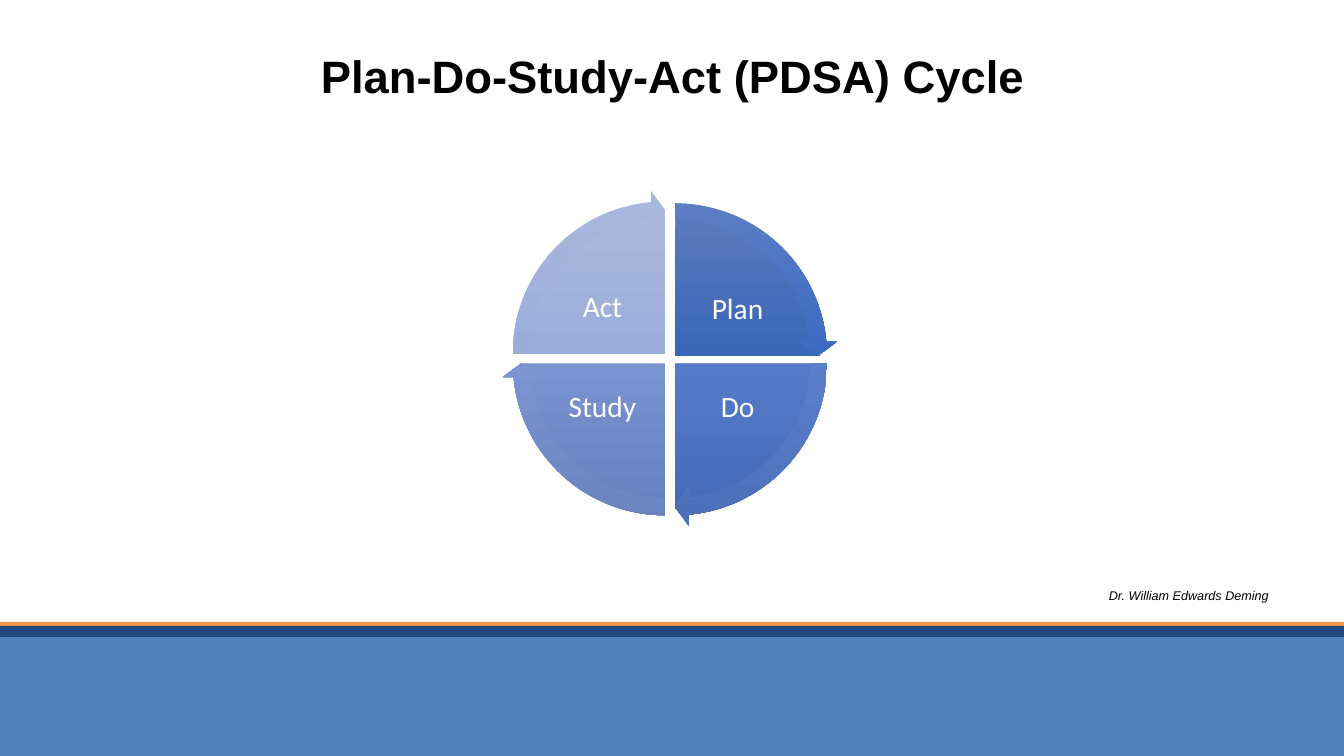
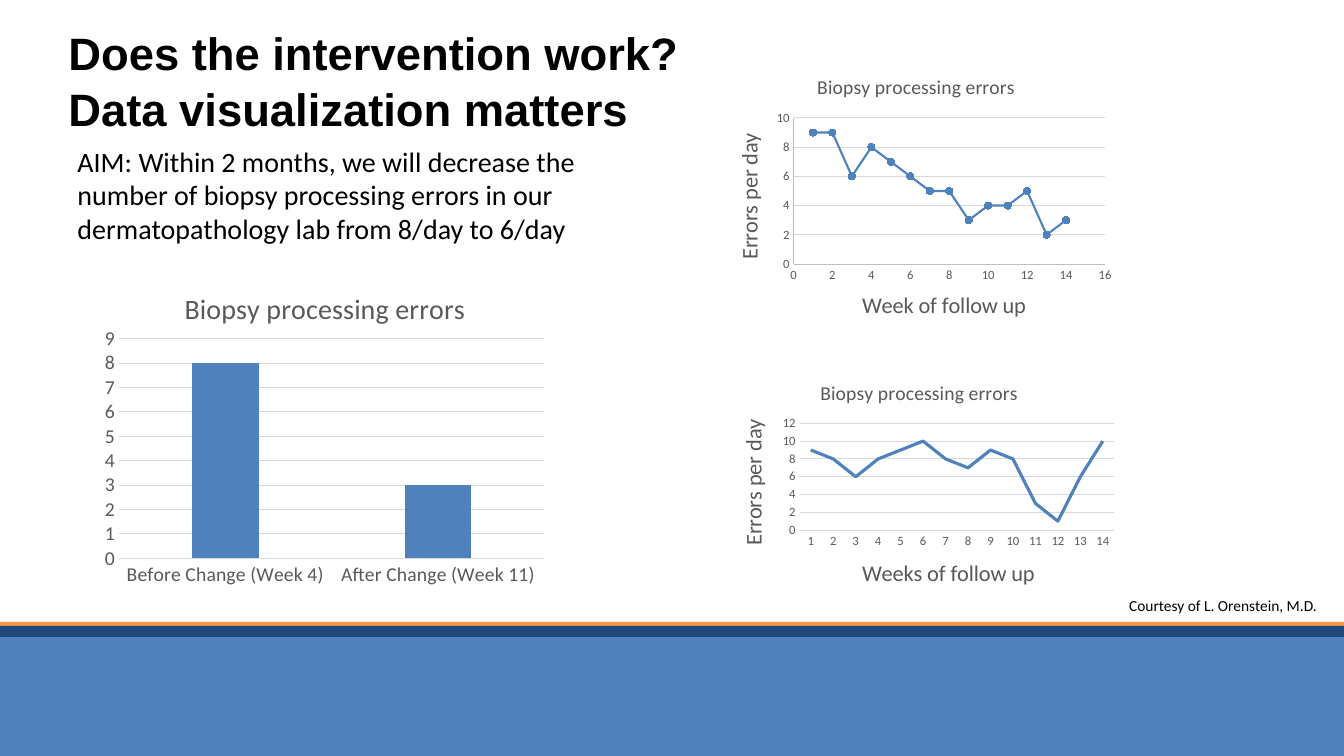
from copy import deepcopy

from lxml import etree
from pptx import Presentation
from pptx import util as u
from pptx.chart import data as chart_data
from pptx.dml import color
from pptx.enum import chart as charts, shapes, text
from pptx.oxml import ns

BLACK, WHITE, GREY, GRID = "000000", "FFFFFF", "595959", "D9D9D9"
BLUE, NAVY, ORANGE, AXIS = "4F81BD", "1F497D", "F79646", "BFBFBF"
FULL_TURN, QUARTER = 216, 54


def rgb(value):
    return color.RGBColor.from_string(value)


def add_text(page, words, area, size, font="Calibri", ink=BLACK):
    box = page.shapes.add_textbox(*map(u.Inches, area))
    box.text_frame.word_wrap = True
    para = box.text_frame.paragraphs[0]
    para.text = words
    para.font.size, para.font.name = u.Pt(size), font
    para.font.color.rgb = rgb(ink)
    return box.text_frame, para


deck = Presentation()
deck.slide_width, deck.slide_height = u.Inches(13.33), u.Inches(7.5)

titles = [
    ("Plan-Do-Study-Act (PDSA) Cycle", (2.7, 0.15, 7.94, 1.17), text.PP_ALIGN.CENTER),
    ("Does the intervention work?\vData visualization matters", (0.58, 0.2, 12.11, 1.17), text.PP_ALIGN.LEFT),
]
bands = [(6.17, 0.11, ORANGE), (6.25, 1.25, BLUE), (6.21, 0.11, NAVY)]
for words, area, align in titles:
    page = deck.slides.add_slide(deck.slide_layouts[6])
    frame, para = add_text(page, words, area, 32.4, "Arial")
    frame.vertical_anchor = text.MSO_ANCHOR.MIDDLE
    para.alignment, para.line_spacing = align, 1.04
    para.font.bold = True
    for top, height, fill in bands:
        band = page.shapes.add_shape(
            shapes.MSO_SHAPE.RECTANGLE, 0, u.Inches(top), deck.slide_width, u.Inches(height))
        band.shadow.inherit = False
        band.fill.solid()
        band.fill.fore_color.rgb = rgb(fill)
        band.line.fill.background()

cycle_page, data_page = deck.slides

frame, para = add_text(cycle_page, "Dr. William Edwards Deming", (10.9, 5.78, 2.4, 0.25), 9, "Arial")
para.font.italic = True

quarters = [
    ("Plan", 5.26, 2.09, 1.68, 0.71, ("5C7ABD", "3866B8", "2D59A8"), ("5E7EC4", "3B6BC1", "2F5EB1")),
    ("Do", 5.26, 2.17, 1.68, 1.6, ("708BCA", "557BC8", "466BB8"), ("758FCC", "5B7FCA", "4B6FB9")),
    ("Study", 5.16, 2.17, 0.44, 1.6, ("8DA1D3", "7993D1", "6781BE"), ("8FA3D4", "7C95D2", "6983BF")),
    ("Act", 5.16, 2.07, 0.44, 0.71, ("ABB8DD", "9CADDB", "8798C6"), ("AAB7DD", "9BACDB", "8697C6")),
]
pies, arrows = [], []
for index, (name, left, top, label_x, label_y, pie_shades, arrow_shades) in enumerate(quarters):
    end = index * QUARTER
    start = (end - QUARTER) % FULL_TURN
    label = (name, (left + label_x, top + label_y, 0.75, 0.56))
    pies.append((shapes.MSO_SHAPE.PIE, left, top, 2.88, (start, end), pie_shades, label))
    sweep = (0.051, 3.275, (end - 3.275) % FULL_TURN, start, 0.059)
    arrows.append((shapes.MSO_SHAPE.CIRCULAR_ARROW, left - 0.18, top - 0.18, 3.23, sweep, arrow_shades, None))

for kind, left, top, size, adjustments, shades, label in pies + arrows:
    part = cycle_page.shapes.add_shape(kind, *map(u.Inches, (left, top, size, size)))
    part.shadow.inherit = False
    part.line.fill.background()
    for index, value in enumerate(adjustments):
        part.adjustments[index] = value
    part.fill.gradient()
    part.fill.gradient_angle = 270
    stop_list = part._element.spPr.find(".//" + ns.qn("a:gsLst"))
    stop_list.append(deepcopy(stop_list[0]))
    for stop, shade, position in zip(part.fill.gradient_stops, shades, (0, 0.5, 1)):
        stop.color.rgb, stop.position = rgb(shade), position
    if label:
        frame, para = add_text(cycle_page, *label, 21, ink=WHITE)
        frame.word_wrap = False
        frame.vertical_anchor = text.MSO_ANCHOR.MIDDLE
        frame.margin_left = frame.margin_right = u.Inches(0.03)
        frame.margin_top = frame.margin_bottom = u.Inches(0.03)
        para.alignment, para.line_spacing = text.PP_ALIGN.CENTER, 0.9

before_after = chart_data.CategoryChartData()
before_after.categories = ["Before Change (Week 4)", "After Change (Week 11)"]
before_after.add_series("Series 1", [8, 3])

steady = chart_data.XyChartData()
points = steady.add_series("Series 1")
for week, errors in enumerate([9, 9, 6, 8, 7, 6, 5, 5, 3, 4, 4, 5, 2, 3], 1):
    points.add_data_point(week, errors)

unsteady = chart_data.CategoryChartData()
unsteady.categories = [str(week) for week in range(1, 15)]
unsteady.add_series("Series 1", [9, 8, 6, 8, 9, 10, 8, 7, 9, 8, 3, 1, 6, 10])

KINDS = charts.XL_CHART_TYPE
panels = [
    dict(kind=KINDS.COLUMN_CLUSTERED, data=before_after, area=(0.95, 2.67, 4.54, 3.2),
         plot=(1.18, 3.36, 4.22, 2.18), title_at=(1.78, 2.81), title_size=20,
         label_size=14, top=9, step=1, axis_titles=[]),
    dict(kind=KINDS.XY_SCATTER_LINES, data=steady, area=(7.07, 0.6, 4.04, 2.8),
         plot=(7.87, 1.17, 3.09, 1.45), title_at=(8.07, 0.69), title_size=14,
         label_size=9, top=10, step=2,
         axis_titles=[("Week of follow up", (8.51, 2.84)), ("Errors per day", (7.24, 1.28))]),
    dict(kind=KINDS.LINE, data=unsteady, area=(7.1, 3.64, 4.04, 2.42),
         plot=(7.93, 4.2, 3.12, 1.06), title_at=(8.1, 3.73), title_size=14,
         label_size=9, top=12, step=2,
         axis_titles=[("Weeks of follow up", (8.51, 5.49)), ("Errors per day", (7.28, 4.12))]),
]
for panel in panels:
    area, kind = panel["area"], panel["kind"]
    chart = data_page.shapes.add_chart(kind, *map(u.Inches, area), panel["data"]).chart
    chart.has_legend = False
    chart.font.name, chart.font.size = "Calibri", u.Pt(10)
    chart.has_title = True
    across, upright = chart.category_axis, chart.value_axis

    headings = [(chart.chart_title, "Biopsy processing errors", panel["title_size"], panel["title_at"])]
    for axis, (words, spot) in zip((across, upright), panel["axis_titles"]):
        headings.append((axis.axis_title, words, 16, spot))
    placed = [(chart._chartSpace.find(".//" + ns.qn("c:plotArea")), panel["plot"])]
    for heading, words, size, spot in headings:
        frame = heading.text_frame
        frame.text = words
        font = frame.paragraphs[0].font
        font.size, font.bold, font.name = u.Pt(size), False, "Calibri"
        font.color.rgb = rgb(GREY)
        placed.append((heading._element, spot))
    if panel["axis_titles"]:
        body = upright.axis_title.text_frame._element.find(ns.qn("a:bodyPr"))
        body.set("rot", "-5400000")
        body.set("vert", "horz")

    for node, place in placed:
        layout = node.find(ns.qn("c:layout"))
        if layout is None:
            layout = etree.Element(ns.qn("c:layout"))
            node.insert(0, layout)
        for child in list(layout):
            layout.remove(child)
        manual = etree.SubElement(layout, ns.qn("c:manualLayout"))
        settings = [("xMode", "edge"), ("yMode", "edge")]
        if len(place) == 4:
            settings.insert(0, ("layoutTarget", "inner"))
        shares = [(place[0] - area[0]) / area[2], (place[1] - area[1]) / area[3]]
        if len(place) == 4:
            shares += [place[2] / area[2], place[3] / area[3]]
        settings += [(key, f"{share:.4f}") for key, share in zip("xywh", shares)]
        for key, value in settings:
            etree.SubElement(manual, ns.qn("c:" + key)).set("val", value)

    scatter = kind == KINDS.XY_SCATTER_LINES
    for axis in (across, upright):
        axis.major_tick_mark = axis.minor_tick_mark = charts.XL_TICK_MARK.NONE
        font = axis.tick_labels.font
        font.size, font.name = u.Pt(panel["label_size"]), "Calibri"
        font.color.rgb = rgb(GREY)
        axis.format.line.width = u.Pt(0.75)
        axis.format.line.color.rgb = rgb(AXIS if scatter else GRID)
    across.has_major_gridlines = False
    upright.has_major_gridlines = True
    upright.major_gridlines.format.line.color.rgb = rgb(GRID)
    upright.major_gridlines.format.line.width = u.Pt(0.75)
    upright.minimum_scale, upright.maximum_scale = 0, panel["top"]
    upright.major_unit = panel["step"]

    plot = chart.plots[0]
    plot.vary_by_categories = False
    series = plot.series[0]
    if scatter:
        across.minimum_scale, across.maximum_scale, across.major_unit = 0, 16, 2
        series.marker.style, series.marker.size = charts.XL_MARKER_STYLE.CIRCLE, 5
        series.marker.format.fill.solid()
        series.marker.format.fill.fore_color.rgb = rgb(BLUE)
        series.marker.format.line.color.rgb = rgb(BLUE)
    else:
        upright.format.line.fill.background()
    if kind == KINDS.COLUMN_CLUSTERED:
        plot.gap_width, plot.overlap = 219, -27
        series.format.fill.solid()
        series.format.fill.fore_color.rgb = rgb(BLUE)
    else:
        series.smooth = False
        series.format.line.color.rgb = rgb(BLUE)
        series.format.line.width = u.Pt(1.5 if scatter else 2.25)

aim = ("AIM: Within 2 months, we will decrease the number of biopsy processing errors "
       "in our dermatopathology lab from 8/day to 6/day")
add_text(data_page, aim, (0.67, 1.38, 5.75, 1.11), 20)
add_text(data_page, "Courtesy of L. Orenstein, M.D.", (11.1, 5.86, 2.23, 0.29), 11)

deck.save("out.pptx")
